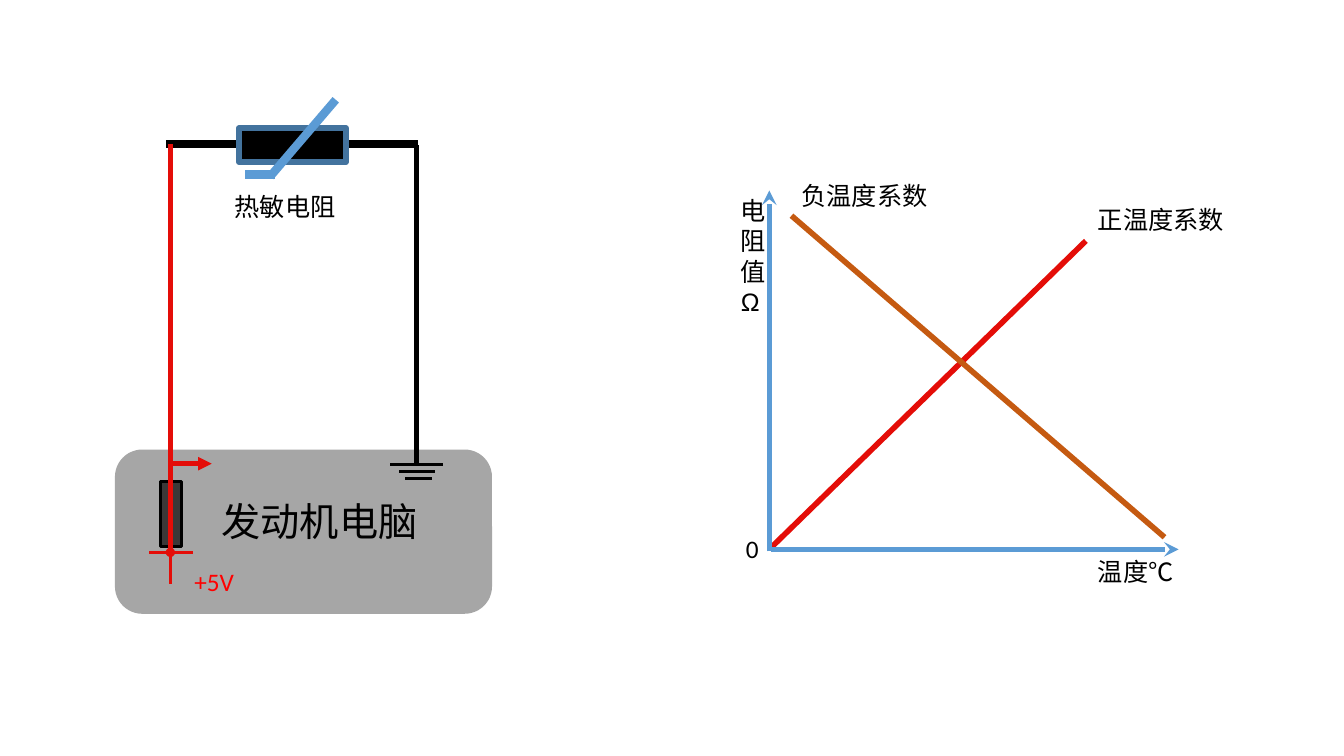
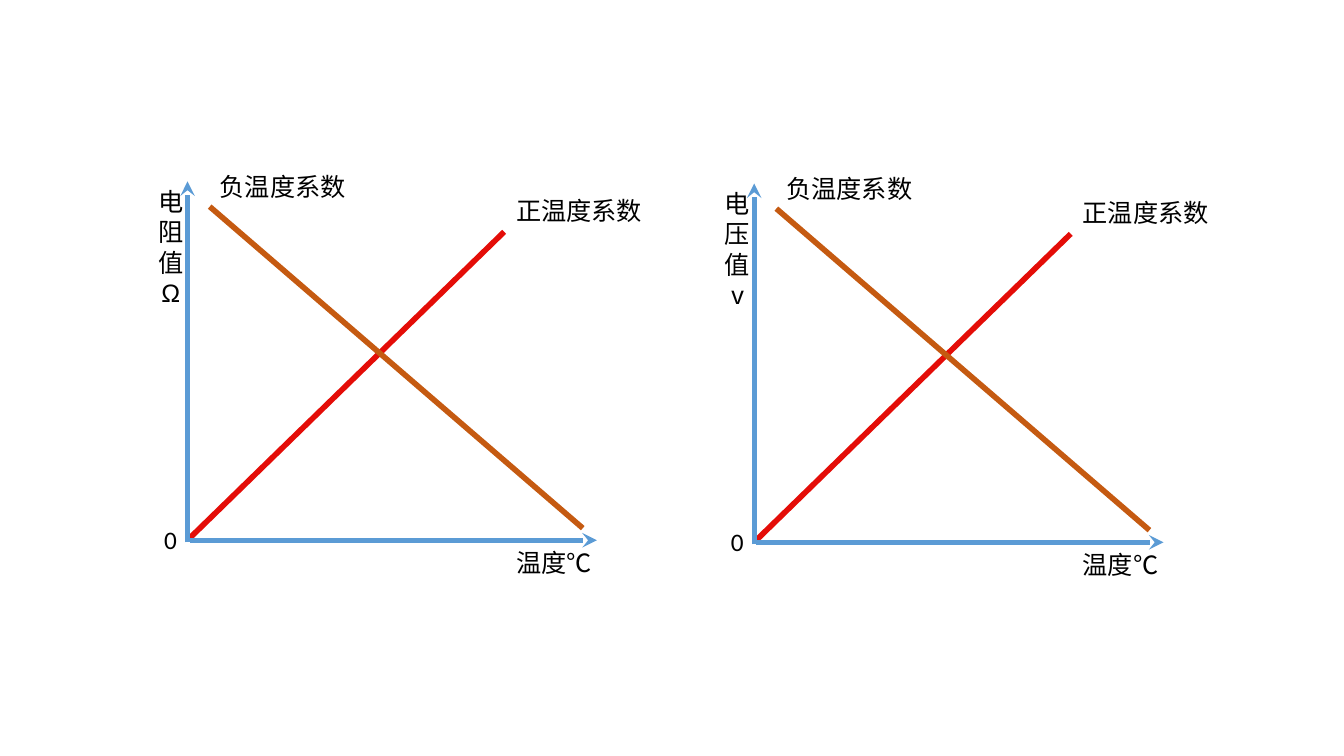
from dataclasses import dataclass

from pptx import Presentation
from pptx.dml.color import RGBColor
from pptx.enum import shapes, text
from pptx.oxml import ns, xmlchemy
from pptx.util import Inches, Pt


@dataclass(frozen=True)
class Theme:
    black: str = "000000"
    red: str = "E40D08"
    label_red: str = "FF0000"
    blue: str = "5B9BD5"
    dark_blue: str = "43739E"
    brown: str = "C55A11"
    gray: str = "A6A6A6"
    dark_gray: str = "3B3838"
    font: str = "Calibri"
    axis_font: str = "Arial"
    label_size: int = 18
    computer_size: int = 28
    axis_width: float = 3.5
    curve_width: float = 4
    thin_width: float = 2.25


THEME = Theme()


class Diagram:
    def __init__(self, presentation, theme):
        self.presentation = presentation
        self.theme = theme
        self.slide = None

    def new_slide(self):
        self.slide = self.presentation.slides.add_slide(self.presentation.slide_layouts[6])

    def line(self, start, end, color, width, tail=None):
        points = [Inches(value) for value in (*start, *end)]
        connector = self.slide.shapes.add_connector(shapes.MSO_CONNECTOR.STRAIGHT, *points)
        connector.line.color.rgb = RGBColor.from_string(color)
        connector.line.width = Pt(width)
        if tail:
            tail_end = xmlchemy.OxmlElement("a:tailEnd")
            tail_end.set("type", tail)
            connector.line._get_or_add_ln().append(tail_end)
        properties = connector._element.find(ns.qn("p:spPr"))
        properties.append(xmlchemy.OxmlElement("a:effectLst"))

    def box(self, kind, frame, fill, outline=None, width=0):
        shape = self.slide.shapes.add_shape(kind, *map(Inches, frame))
        shape.shadow.inherit = False
        shape.fill.solid()
        shape.fill.fore_color.rgb = RGBColor.from_string(fill)
        if outline:
            shape.line.color.rgb = RGBColor.from_string(outline)
            shape.line.width = Pt(width)
        else:
            shape.line.fill.background()

    def label(self, frame, lines, size=None, color=None, font=None, wrap=False, align=None):
        frame_text = self.slide.shapes.add_textbox(*map(Inches, frame)).text_frame
        frame_text.word_wrap = wrap
        frame_text.auto_size = text.MSO_AUTO_SIZE.SHAPE_TO_FIT_TEXT
        frame_text.text = "\n".join(lines)
        for paragraph in frame_text.paragraphs:
            paragraph.alignment = align
            paragraph.font.name = font or self.theme.font
            paragraph.font.size = Pt(size or self.theme.label_size)
            paragraph.font.color.rgb = RGBColor.from_string(color or self.theme.black)

    def temperature_graph(self, left, bottom, quantity, label_gap=0.39,
                          align=text.PP_ALIGN.CENTER):
        theme = self.theme

        def at(x, y):
            return round(left + x, 2), round(bottom - y, 2)

        self.line(at(3.14, 3.08), at(0.02, 0.04), theme.red, theme.curve_width)
        self.line(at(0.02, 0.02), at(4.06, 0.02), theme.blue, theme.axis_width, "stealth")
        self.line(at(0, 0), at(0, 3.58), theme.blue, theme.axis_width, "stealth")
        self.label((*at(-label_gap, 3.58), 0.45, 1.31), quantity,
                   font=theme.axis_font, align=align)
        self.label((*at(3.16, 0), 0.95, 0.4), ["温度℃"])
        self.label((*at(-0.33, 0.23), 0.33, 0.4), ["0"])
        self.line(at(3.92, 0.14), at(0.22, 3.33), theme.brown, theme.curve_width)
        self.label((*at(0.22, 3.73), 1.59, 0.4), ["负温度系数"], wrap=True)
        self.label((*at(3.16, 3.49), 1.59, 0.4), ["正温度系数"], wrap=True)

    def thermistor(self):
        theme = self.theme
        self.line((1.65, 1.43), (4.15, 1.43), theme.black, 5.25)
        self.box(shapes.MSO_SHAPE.RECTANGLE, (2.37, 1.27, 1.06, 0.34),
                 theme.black, theme.dark_blue, 4)
        self.line((3.33, 0.99), (2.68, 1.75), theme.blue, 6)
        self.line((2.73, 1.73), (2.43, 1.73), theme.blue, 6)
        self.label((2.23, 1.85, 1.28, 0.4), ["热敏电阻"], wrap=True)

    def ground(self):
        for right, left, y in ((4.39, 3.87, 4.61), (4.31, 3.96, 4.68), (4.28, 4.02, 4.75)):
            self.line((right, y), (left, y), self.theme.black, self.theme.thin_width)

    def engine_computer(self):
        theme = self.theme
        self.box(shapes.MSO_SHAPE.ROUNDED_RECTANGLE, (1.14, 4.46, 3.74, 1.63), theme.gray)
        self.line((4.13, 1.44), (4.13, 4.61), theme.black, theme.curve_width)
        self.ground()
        self.box(shapes.MSO_SHAPE.RECTANGLE, (1.59, 4.78, 0.21, 0.64),
                 theme.dark_gray, theme.black, 2)
        self.line((1.71, 4.6), (2.1, 4.6), theme.red, 3.25, "triangle")
        self.line((1.69, 5.79), (1.69, 5.48), theme.red, theme.thin_width, "oval")
        self.line((1.91, 5.48), (1.48, 5.48), theme.red, theme.thin_width)
        self.label((1.83, 5.57, 0.59, 0.4), ["+5V"], color=theme.label_red)
        self.label((2.1, 4.88, 2.14, 0.57), ["发动机电脑"], size=theme.computer_size)
        self.line((1.69, 1.43), (1.69, 5.48), theme.red, theme.curve_width)


def main():
    presentation = Presentation()
    presentation.slide_width = Inches(13.33)
    presentation.slide_height = Inches(7.5)
    diagram = Diagram(presentation, THEME)

    diagram.new_slide()
    diagram.thermistor()
    diagram.engine_computer()
    diagram.temperature_graph(7.63, 5.47, "电阻值Ω", 0.38, text.PP_ALIGN.LEFT)

    diagram.new_slide()
    diagram.temperature_graph(7.48, 5.4, "电压值v")
    diagram.temperature_graph(1.86, 5.38, "电阻值Ω")

    presentation.save("out.pptx")


if __name__ == "__main__":
    main()
